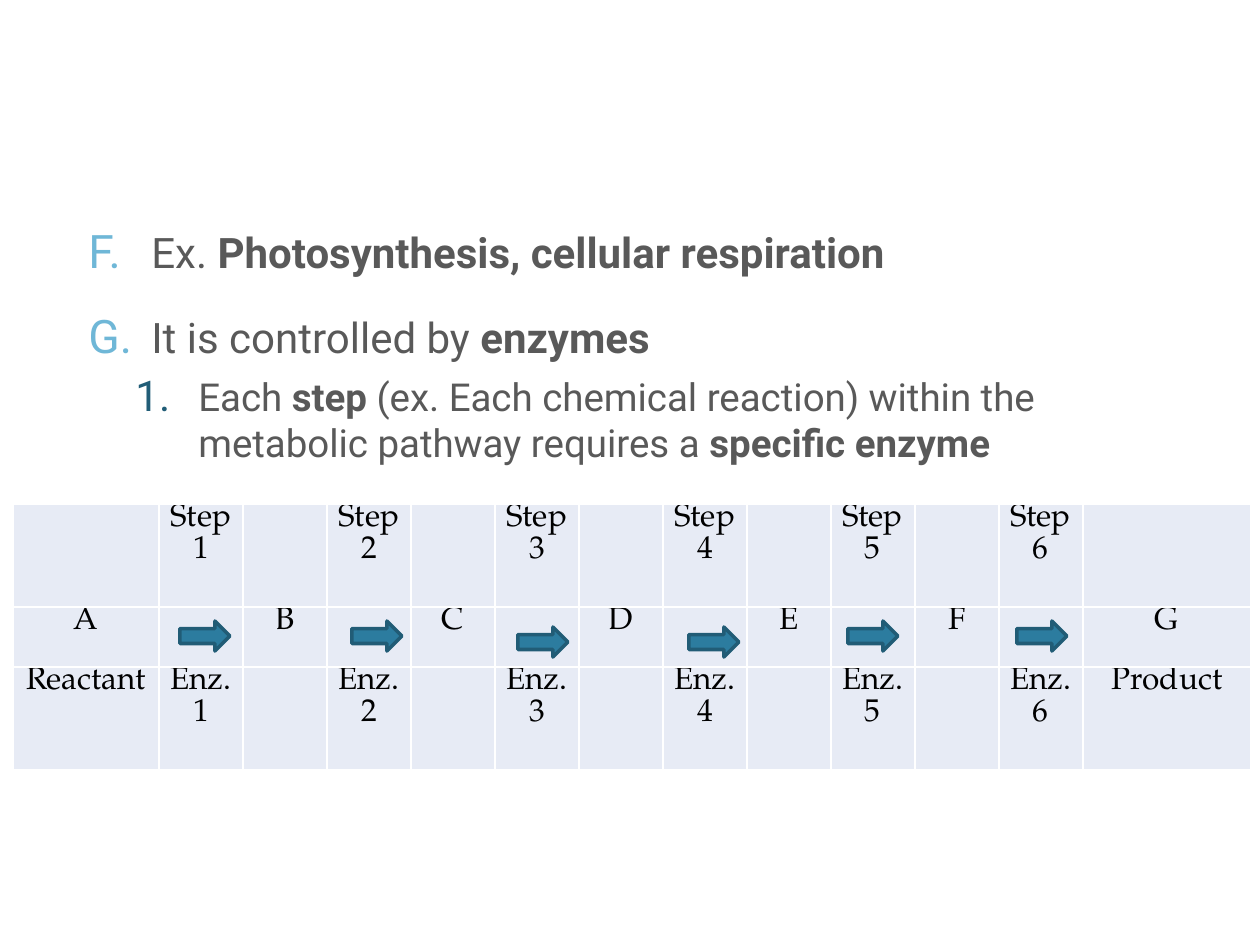
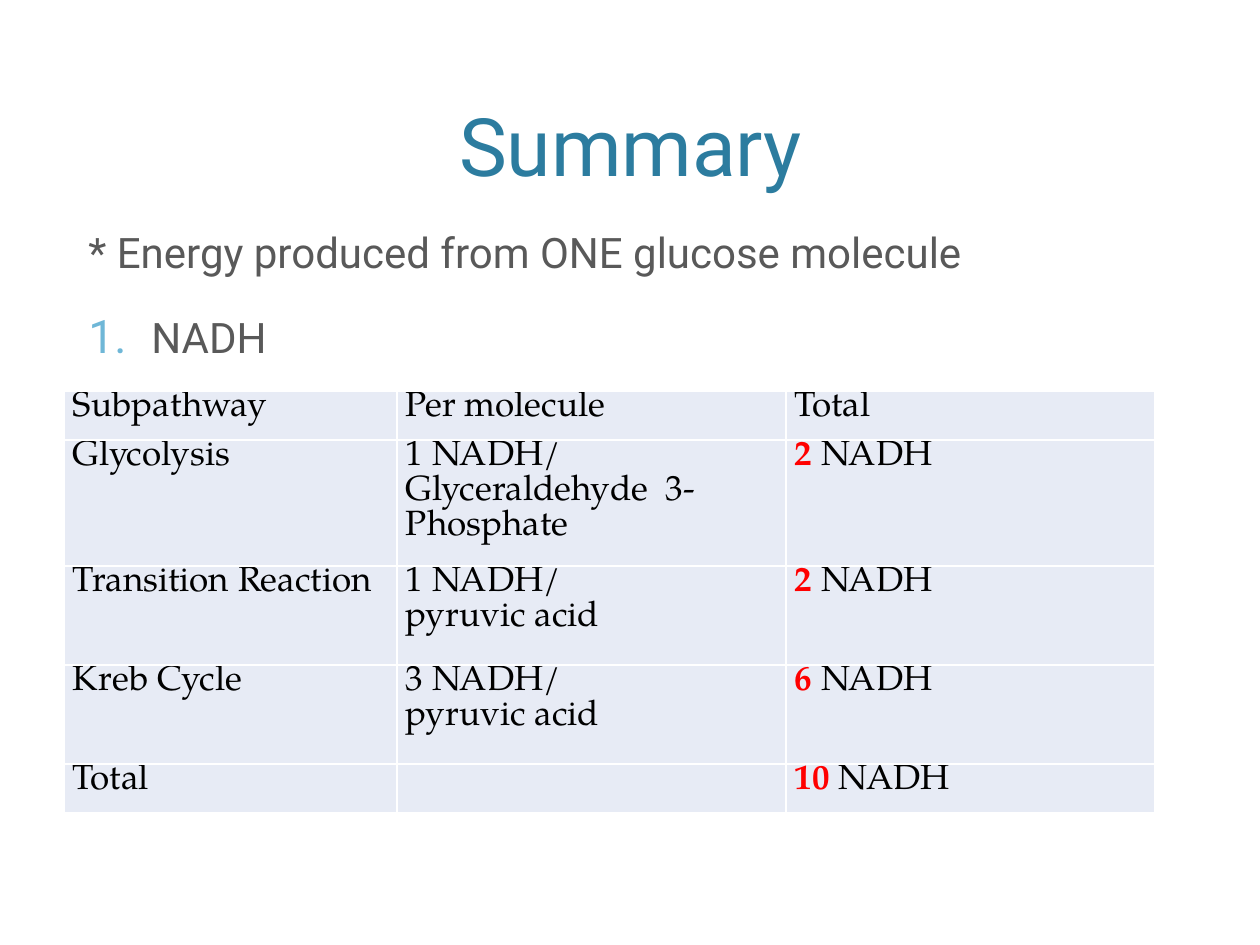
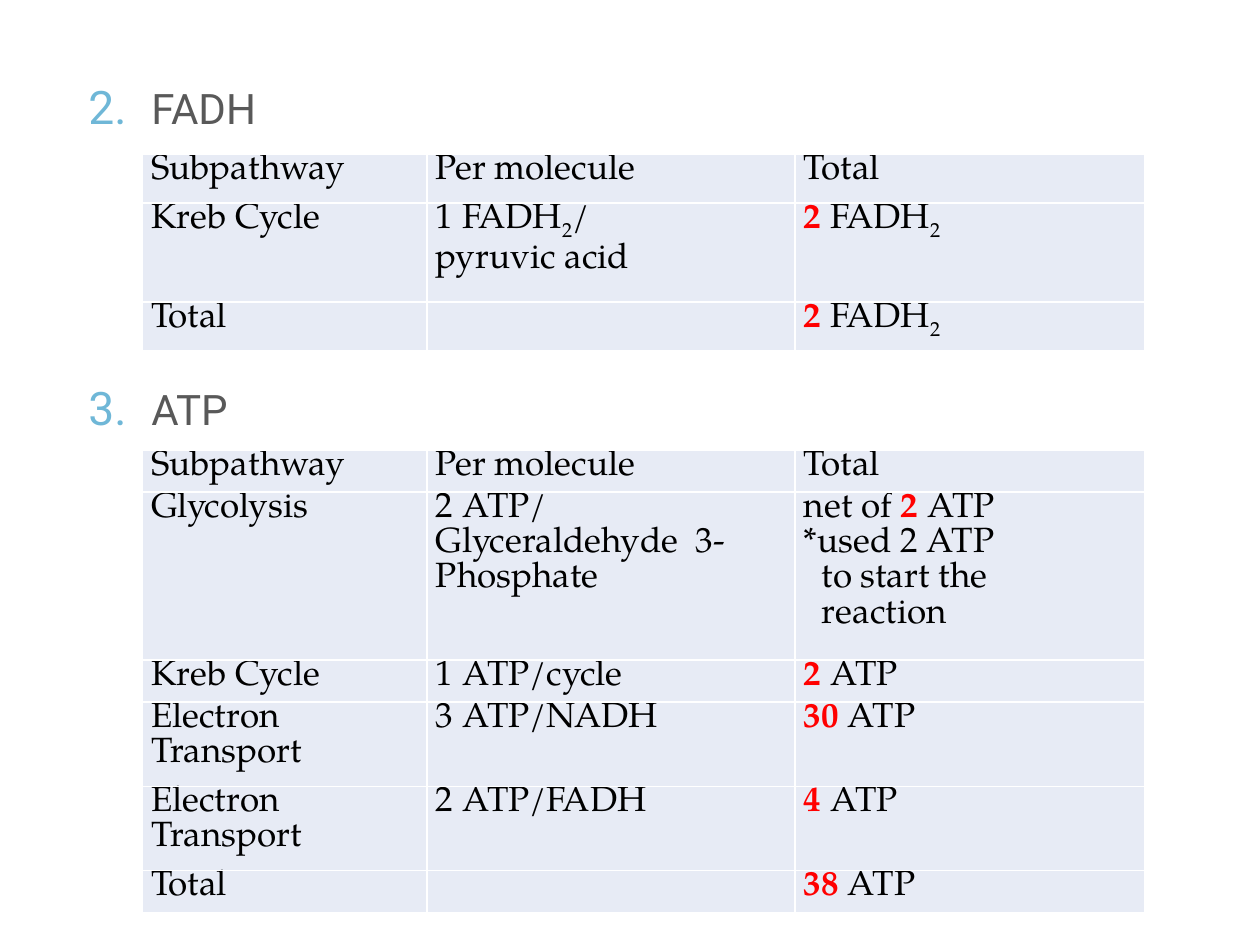
from dataclasses import dataclass
from lxml import etree
from pptx import Presentation
from pptx.dml.color import RGBColor
from pptx.enum.shapes import MSO_SHAPE
from pptx.enum.text import MSO_ANCHOR, PP_ALIGN
from pptx.oxml.ns import qn
from pptx.util import Pt

RIGHT_ARROW = MSO_SHAPE.RIGHT_ARROW
BOTTOM = MSO_ANCHOR.BOTTOM
TOP = MSO_ANCHOR.TOP
LEFT = PP_ALIGN.LEFT
CENTER = PP_ALIGN.CENTER

EMU_PER_PX = 914400 / 126
SLIDE_W, SLIDE_H = 1260, 945
BODY_X, BODY_W = 76, 1109
INDENT = 63
CELL_INSET = 9
NOTE_INDENT = 18


@dataclass(frozen=True)
class Theme:
    accent: str = "2C7C9F"
    accent_dark: str = "215C76"
    number: str = "6FB7D7"
    sub_number: str = "215D77"
    text: str = "595959"
    cell_text: str = "000000"
    cell_fill: str = "E7EBF5"
    cell_border: str = "FFFFFF"
    highlight: str = "FF0000"
    sans: str = "Roboto"
    serif: str = "TeX Gyre Pagella"
    title_size: int = 46
    body_size: int = 24
    sub_size: int = 22
    table_size: int = 20
    step_size: int = 18
    empty_size: int = 10


T = Theme()
TITLE = {"name": T.sans, "size": Pt(T.title_size), "color": T.accent}
BODY = {"name": T.sans, "size": Pt(T.body_size), "color": T.text}
SUB_BODY = {**BODY, "size": Pt(T.sub_size)}
TABLE = {"name": T.serif, "size": Pt(T.table_size), "color": T.cell_text}
STEP = {**TABLE, "size": Pt(T.step_size)}
BOLD = {"bold": True}
RED_BOLD = {"bold": True, "color": T.highlight}
HEADER = ["Subpathway", "Per molecule", "Total"]


def px(n):
    return round(n * EMU_PER_PX)


def rgb(value):
    return RGBColor.from_string(value)


def style(font, fmt):
    for key, value in fmt.items():
        if key == "color":
            font.color.rgb = rgb(value)
        else:
            setattr(font, key, value)


def add_runs(p, text, fmt, strong):
    # "|" toggles strong text and "_" toggles subscript
    for i, part in enumerate(text.split("|")):
        for j, piece in enumerate(part.split("_")):
            if piece:
                r = p.add_run()
                r.text = piece
                style(r.font, {**fmt, **(strong if i % 2 else {})})
                if j % 2:
                    r.font._element.set("baseline", "-25000")


def set_indent(p, left, first=0):
    pPr = p._p.get_or_add_pPr()
    pPr.set("marL", str(px(left)))
    pPr.set("indent", str(px(first)))
    return pPr


def add_number(p, left, scheme, start, color):
    pPr = set_indent(p, left, -INDENT)
    clr = etree.SubElement(pPr, qn("a:buClr"))
    etree.SubElement(clr, qn("a:srgbClr"), val=color)
    etree.SubElement(pPr, qn("a:buSzPct"), val="110000")
    etree.SubElement(pPr, qn("a:buAutoNum"), type=scheme, startAt=str(start))


def add_text(slide, x, y, w, h, anchor=TOP):
    tf = slide.shapes.add_textbox(px(x), px(y), px(w), px(h)).text_frame
    tf.word_wrap = True
    tf.vertical_anchor = anchor
    return tf


def add_title(slide, text):
    p = add_text(slide, BODY_X, 15, BODY_W, 184, BOTTOM).paragraphs[0]
    p.alignment = CENTER
    add_runs(p, text, TITLE, BOLD)


def add_body(slide, y, h, items):
    tf = add_text(slide, BODY_X, y, BODY_W, h)
    for i, (text, level, scheme, start) in enumerate(items):
        p = tf.add_paragraph() if i else tf.paragraphs[0]
        p.level = level
        p.space_before = Pt(6 if level else 20)
        if scheme:
            left = 110 if level else INDENT
            add_number(p, left, scheme, start, T.sub_number if level else T.number)
        add_runs(p, text, SUB_BODY if level else BODY, BOLD)


def format_cell(cell):
    cell.margin_left = cell.margin_right = px(CELL_INSET)
    cell.margin_top = cell.margin_bottom = 0
    tcPr = cell._tc.get_or_add_tcPr()
    for side in ("lnL", "lnR", "lnT", "lnB"):
        ln = etree.SubElement(tcPr, qn(f"a:{side}"), w=str(Pt(1)))
        fill = etree.SubElement(ln, qn("a:solidFill"))
        etree.SubElement(fill, qn("a:srgbClr"), val=T.cell_border)
    cell.fill.solid()
    cell.fill.fore_color.rgb = rgb(T.cell_fill)


def fill_cell(cell, text, fmt, align):
    format_cell(cell)
    tf = cell.text_frame
    for i, line in enumerate(text.split("\n")):
        p = tf.add_paragraph() if i else tf.paragraphs[0]
        p.alignment = align
        if line.startswith(">"):
            set_indent(p, NOTE_INDENT)
        add_runs(p, line.lstrip(">"), fmt, RED_BOLD)
        if not line:
            p._p.get_or_add_endParaRPr().set("sz", str(T.empty_size * 100))


def add_grid(slide, x, y, widths, heights, rows, fmt=TABLE, align=LEFT):
    table = slide.shapes.add_table(
        len(rows), len(widths), px(x), px(y), px(sum(widths)), px(sum(heights))
    ).table
    table.first_row = table.horz_banding = False
    for column, w in zip(table.columns, widths):
        column.width = px(w)
    for row, h, texts in zip(table.rows, heights, rows):
        row.height = px(h)
        for cell, text in zip(row.cells, texts):
            fill_cell(cell, text, fmt, align)


def add_arrow(slide, x, y):
    sp = slide.shapes.add_shape(RIGHT_ARROW, px(x), px(y), px(50), px(30))
    sp.shadow.inherit = False
    sp.fill.solid()
    sp.fill.fore_color.rgb = rgb(T.accent)
    sp.line.color.rgb = rgb(T.accent_dark)
    sp.line.width = Pt(2)


def between(first, middle, last):
    return [first, *middle, last]


def pathway_slide(slide):
    add_body(slide, 220, 270, [
        ("Ex. |Photosynthesis, cellular respiration|", 0, "alphaUcPeriod", 6),
        ("It is controlled by |enzymes|", 0, "alphaUcPeriod", 7),
        ("Each |step| (ex. Each chemical reaction) within the metabolic "
         "pathway requires a |specific enzyme|", 1, "arabicPeriod", 1),
    ])
    steps, enzymes, compounds = (
        [f"{label}{n // 2 + 1}" if n % 2 == 0 else "" for n in range(11)]
        for label in ("Step ", "Enz. ", "")
    )
    compounds = ["" if n % 2 == 0 else "BCDEF"[n // 2] for n in range(11)]
    add_grid(slide, 13, 504, between(146, [84] * 11, 168), [103, 60, 103], [
        between("", steps, ""),
        between("A", compounds, "G"),
        between("Reactant", enzymes, "Product"),
    ], STEP, CENTER)
    for x, y in [(180, 621), (352, 621), (518, 627), (689, 627), (848, 621), (1017, 621)]:
        add_arrow(slide, x, y)


def nadh_slide(slide):
    add_title(slide, "Summary")
    add_body(slide, 220, 160, [
        ("* Energy produced from ONE glucose molecule", 0, None, None),
        ("NADH", 0, "arabicPeriod", 1),
    ])
    add_grid(slide, 64, 391, [333, 389, 369], [49, 99, 99, 99, 49], [
        HEADER,
        ["Glycolysis", "1 NADH/ Glyceraldehyde  3- Phosphate", "|2 |NADH"],
        ["Transition Reaction", "1 NADH/\npyruvic acid", "|2 |NADH"],
        ["Kreb Cycle", "3 NADH/\npyruvic acid", "|6| NADH"],
        ["Total", "", "|10 |NADH"],
    ])


def fadh_atp_slide(slide):
    widths = [285, 368, 350]
    add_body(slide, 76, 70, [("FADH", 0, "arabicPeriod", 2)])
    add_grid(slide, 142, 154, widths, [49, 99, 49], [
        HEADER,
        ["Kreb Cycle", "1 FADH_2_/\npyruvic acid", "|2| FADH_2_"],
        ["Total", "", "|2 |FADH_2_"],
    ])
    add_body(slide, 377, 70, [("ATP", 0, "arabicPeriod", 3)])
    add_grid(slide, 142, 450, widths, [36, 145, 36, 36, 36, 36], [
        HEADER,
        ["Glycolysis", "2 ATP/ Glyceraldehyde  3- Phosphate",
         "net of| 2 |ATP\n*used 2 ATP\n>to start the\n>reaction"],
        ["Kreb Cycle", "1 ATP/cycle", "|2| ATP"],
        ["Electron Transport", "3 ATP/NADH", "|30| ATP"],
        ["Electron Transport", "2 ATP/FADH", "|4| ATP"],
        ["Total", "", "|38| ATP"],
    ])


def main():
    prs = Presentation()
    prs.slide_width, prs.slide_height = px(SLIDE_W), px(SLIDE_H)
    blank = prs.slide_layouts[6]
    for build in (pathway_slide, nadh_slide, fadh_atp_slide):
        build(prs.slides.add_slide(blank))
    prs.save("out.pptx")


if __name__ == "__main__":
    main()
